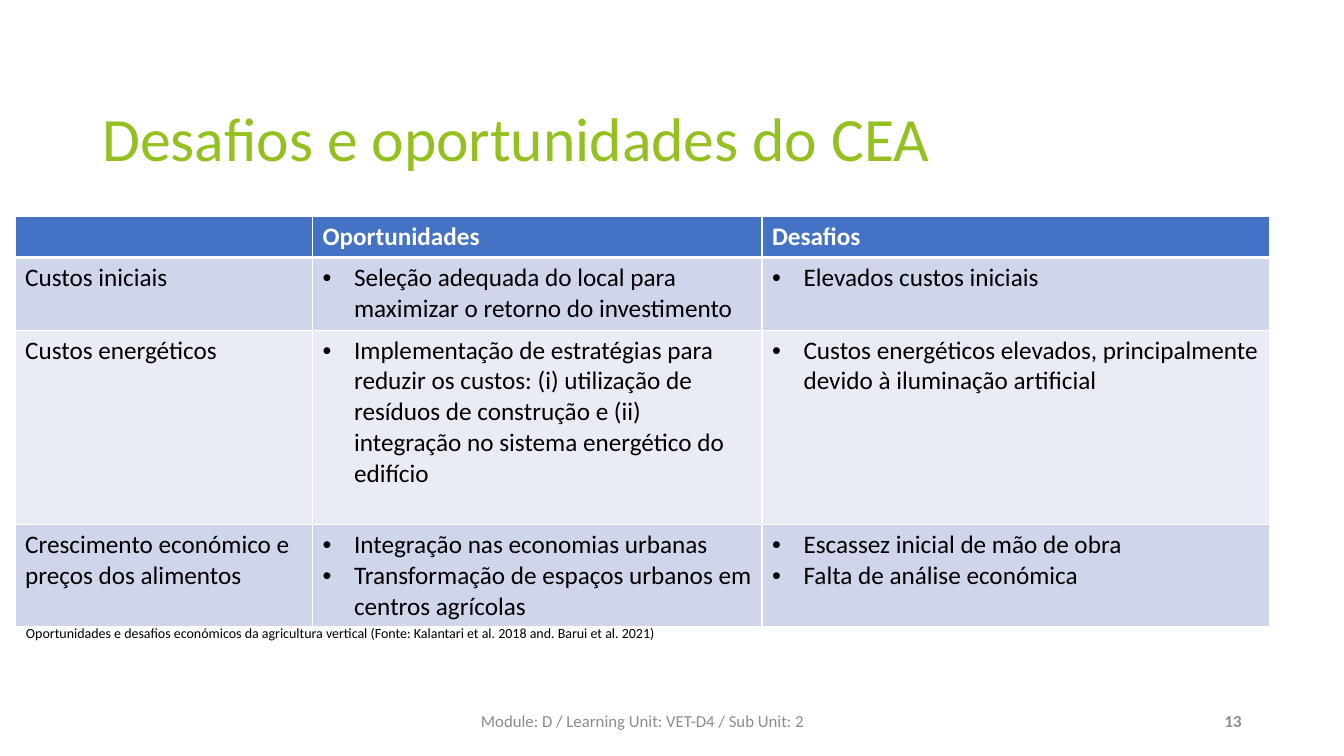
from dataclasses import dataclass

from lxml import etree
from pptx import Presentation
from pptx.dml.color import RGBColor
from pptx.enum.text import MSO_ANCHOR, PP_ALIGN
from pptx.oxml.ns import qn
from pptx.slide import Slide
from pptx.table import _Cell
from pptx.text.text import _Paragraph
from pptx.util import Pt

LEFT, CENTER, RIGHT = PP_ALIGN.LEFT, PP_ALIGN.CENTER, PP_ALIGN.RIGHT
TOP, MIDDLE = MSO_ANCHOR.TOP, MSO_ANCHOR.MIDDLE

FONT = "Calibri"
COLORS = {
    "title": "94C020",
    "header": "4472C4",
    "odd_row": "CFD5EA",
    "even_row": "E9EBF5",
    "white": "FFFFFF",
    "black": "000000",
    "footer": "8C8C8C",
}
BULLET_INDENT = 22.5
TABLE_LEFT, TABLE_TOP = 10.8, 154.8
COLUMN_WIDTHS = (212.4, 321.1, 362.9)
ROW_HEIGHTS = (29.2, 51.8, 138.9, 72.8)


@dataclass
class Label:
    text: str
    left: float
    top: float
    width: float
    height: float
    size: float
    color: str
    bold: bool = False
    align: PP_ALIGN = LEFT
    anchor: MSO_ANCHOR = MIDDLE
    line_spacing: float = 1.0


@dataclass
class Topic:
    name: str
    opportunities: list[str]
    challenges: list[str]


LABELS = [
    Label("Desafios e oportunidades do CEA", 66, 61.2, 828, 79.2, 44, "title",
          line_spacing=0.9),
    Label("Module: D / Learning Unit: VET-D4 / Sub Unit: 2",
          66, 491, 786, 47.5, 12, "footer", align=CENTER),
    Label("13", 858, 500.4, 36, 28.8, 12, "footer", bold=True, align=RIGHT),
    Label("Oportunidades e desafios económicos da agricultura vertical "
          "(Fonte: Kalantari et al. 2018 and. Barui et al. 2021)",
          11.5, 442.8, 895, 19.4, 10, "black", anchor=TOP),
]
HEADERS = ("", "Oportunidades", "Desafios")
TOPICS = [
    Topic("Custos iniciais",
          ["Seleção adequada do local para maximizar o retorno do investimento"],
          ["Elevados custos iniciais"]),
    Topic("Custos energéticos",
          ["Implementação de estratégias para reduzir os custos: (i) utilização de "
           "resíduos de construção e (ii) integração no sistema energético do edifício"],
          ["Custos energéticos elevados, principalmente devido à iluminação artificial"]),
    Topic("Crescimento económico e preços dos alimentos",
          ["Integração nas economias urbanas",
           "Transformação de espaços urbanos em centros agrícolas"],
          ["Escassez inicial de mão de obra", "Falta de análise económica"]),
]


def add_span(para: _Paragraph, text: str, size: float, color: str, bold: bool) -> None:
    span = para.add_run()
    span.text = text
    span.font.name = FONT
    span.font.size = Pt(size)
    span.font.bold = bold
    span.font.color.rgb = RGBColor.from_string(COLORS[color])


def add_label(page: Slide, label: Label) -> None:
    box = page.shapes.add_textbox(Pt(label.left), Pt(label.top),
                                  Pt(label.width), Pt(label.height))
    frame = box.text_frame
    frame.word_wrap = True
    frame.vertical_anchor = label.anchor
    para = frame.paragraphs[0]
    para.alignment = label.align
    para.line_spacing = label.line_spacing
    add_span(para, label.text, label.size, label.color, label.bold)


def add_bullet(para: _Paragraph) -> None:
    properties = para._p.get_or_add_pPr()
    properties.set("marL", str(Pt(BULLET_INDENT)))
    properties.set("indent", str(-Pt(BULLET_INDENT)))
    etree.SubElement(properties, qn("a:buFont"), typeface="Arial")
    etree.SubElement(properties, qn("a:buChar"), char="•")


def add_borders(cell: _Cell, row: int) -> None:
    """White lines, with a thicker one between the header and the body."""
    widths = {"L": 1, "R": 1, "T": 3 if row == 1 else 1, "B": 3 if row == 0 else 1}
    properties = cell._tc.get_or_add_tcPr()
    for side, width in widths.items():
        line = etree.SubElement(properties, qn(f"a:ln{side}"), w=str(Pt(width)))
        fill = etree.SubElement(line, qn("a:solidFill"))
        etree.SubElement(fill, qn("a:srgbClr"), val=COLORS["white"])


def fill_cell(cell: _Cell, row: int, lines: list[str], bulleted: bool) -> None:
    is_header = row == 0
    background = "header" if is_header else "odd_row" if row % 2 else "even_row"
    add_borders(cell, row)
    cell.fill.solid()
    cell.fill.fore_color.rgb = RGBColor.from_string(COLORS[background])
    frame = cell.text_frame
    for index, line in enumerate(lines):
        para = frame.add_paragraph() if index else frame.paragraphs[0]
        if bulleted:
            add_bullet(para)
        if line:
            add_span(para, line, 18, "white" if is_header else "black", is_header)


def add_topic_table(page: Slide) -> None:
    rows = [[[header] for header in HEADERS]]
    rows += [[[topic.name], topic.opportunities, topic.challenges] for topic in TOPICS]
    table = page.shapes.add_table(
        len(rows), len(HEADERS), Pt(TABLE_LEFT), Pt(TABLE_TOP),
        Pt(sum(COLUMN_WIDTHS)), Pt(sum(ROW_HEIGHTS))).table
    for column, width in zip(table.columns, COLUMN_WIDTHS):
        column.width = Pt(width)
    for table_row, height in zip(table.rows, ROW_HEIGHTS):
        table_row.height = Pt(height)
    for row, cells in enumerate(rows):
        for column, lines in enumerate(cells):
            fill_cell(table.cell(row, column), row, lines,
                      bulleted=row > 0 and column > 0)


def main() -> None:
    deck = Presentation()
    deck.slide_width, deck.slide_height = Pt(960), Pt(540)
    page = deck.slides.add_slide(deck.slide_layouts[6])
    add_topic_table(page)
    for label in LABELS:
        add_label(page, label)
    deck.save("out.pptx")


if __name__ == "__main__":
    main()
